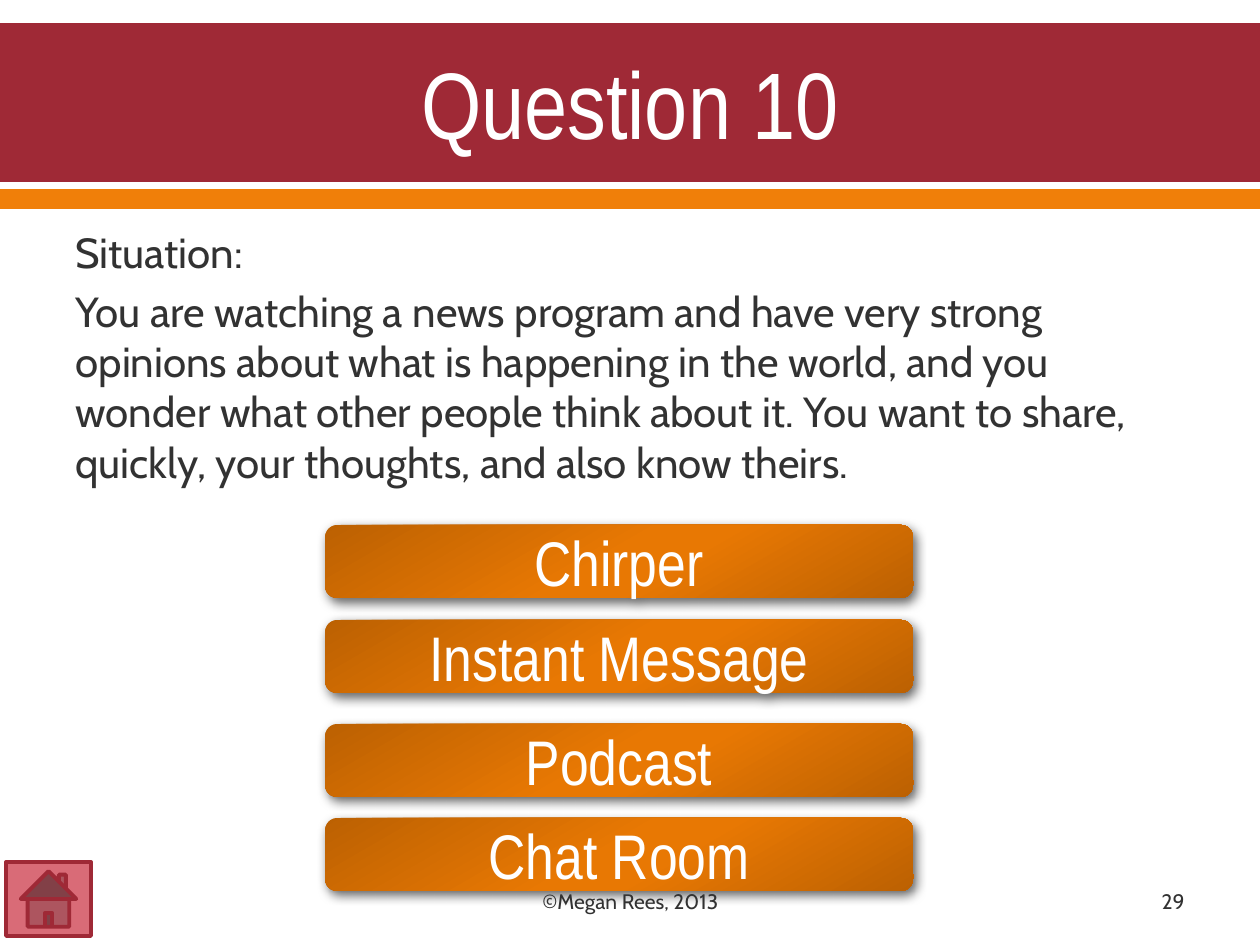
from lxml import etree
from pptx import Presentation
from pptx import util as u
from pptx.dml.color import RGBColor
from pptx.enum import shapes, text
from pptx.oxml import parse_xml
from pptx.oxml.ns import nsdecls, qn

PX = 914400 / 126
WHITE = RGBColor(0xFF, 0xFF, 0xFF)
INK = RGBColor(0x32, 0x32, 0x32)
RED = RGBColor(0x9F, 0x29, 0x36)
ROSE = RGBColor(0xD9, 0x6B, 0x77)
ORANGE = RGBColor(0xF0, 0x7F, 0x09)
BUTTON_STOPS = [(0, RGBColor(0xBC, 0x61, 0x02)), (48, RGBColor(0xE8, 0x78, 0x03)),
                (58, RGBColor(0xE8, 0x78, 0x03)), (100, RGBColor(0xBC, 0x61, 0x02))]
HEADING_FONT, BODY_FONT = "Arial Narrow", "Cabin"
LEFT, CENTER, RIGHT = text.PP_ALIGN.LEFT, text.PP_ALIGN.CENTER, text.PP_ALIGN.RIGHT
MIDDLE, TOP = text.MSO_ANCHOR.MIDDLE, text.MSO_ANCHOR.TOP
SHAPE = shapes.MSO_SHAPE


def px(*lengths):
    return [u.Emu(round(length * PX)) for length in lengths]


def write(frame, *lines, size, font, color, align=CENTER, anchor=MIDDLE):
    frame.word_wrap = True
    frame.vertical_anchor = anchor
    for index, line in enumerate(lines):
        para = frame.add_paragraph() if index else frame.paragraphs[0]
        para.alignment = align
        span = para.add_run()
        span.text = line
        span.font.size = u.Pt(size)
        span.font.name = font
        span.font.color.rgb = color


class QuizPage:
    def __init__(self, deck):
        self.page = deck.slides.add_slide(deck.slide_layouts[1])

    def shape(self, kind, *box, fill=None, line=None, width=2.22):
        shape = self.page.shapes.add_shape(kind, *px(*box))
        shape.shadow.inherit = False
        if fill is not None:
            shape.fill.solid()
            shape.fill.fore_color.rgb = fill
        if line is None:
            shape.line.fill.background()
        else:
            shape.line.color.rgb = line
            shape.line.width = u.Pt(width)
        return shape

    def band(self, top, height, fill):
        band = self.shape(SHAPE.RECTANGLE, 0, top, 1260, height, fill=fill)
        self.page.shapes._spTree.insert(2, band._element)  # behind the placeholders

    def placeholder(self, index, *box):
        holder = self.page.placeholders[index]
        holder.left, holder.top, holder.width, holder.height = px(*box)
        return holder.text_frame

    def title(self, words, *box):
        write(self.placeholder(0, *box), words, size=54, font=HEADING_FONT, color=WHITE)

    def body(self, lines, *box):
        frame = self.placeholder(1, *box)
        write(frame, *lines, size=24, font=BODY_FONT, color=INK, align=LEFT, anchor=TOP)
        for para in frame.paragraphs:
            props = para._p.get_or_add_pPr()
            props.set("marL", "0")
            props.set("indent", "0")
            etree.SubElement(props, qn("a:buNone"))

    def button(self, label, *box):
        button = self.shape(SHAPE.ROUNDED_RECTANGLE, *box)
        stops = "".join(f'<a:gs pos="{at * 1000}"><a:srgbClr val="{color}"/></a:gs>'
                        for at, color in BUTTON_STOPS)
        props = button._element.spPr
        props.find(qn("a:prstGeom")).addnext(parse_xml(
            f'<a:gradFill {nsdecls("a")} rotWithShape="1"><a:gsLst>{stops}</a:gsLst>'
            '<a:lin ang="3600000" scaled="0"/></a:gradFill>'))
        props.find(qn("a:effectLst")).append(parse_xml(
            f'<a:outerShdw {nsdecls("a")} blurRad="{u.Pt(6)}" dist="{u.Pt(3)}" '
            'dir="3600000" rotWithShape="0"><a:srgbClr val="000000">'
            '<a:alpha val="60000"/></a:srgbClr></a:outerShdw>'))
        write(button.text_frame, label, size=36, font=HEADING_FONT, color=WHITE)

    def footer(self, words, *box, align=CENTER):
        label = self.page.shapes.add_textbox(*px(*box))
        write(label.text_frame, words, size=12, font=BODY_FONT, color=INK, align=align)


def main():
    deck = Presentation()
    deck.slide_width, deck.slide_height = px(1260, 945)
    quiz = QuizPage(deck)

    # Header bands and title
    quiz.band(23, 159, RED)
    quiz.band(189, 20, ORANGE)
    quiz.title("Question 10", 63, 25, 1134, 154)

    # Situation
    quiz.body(["Situation:",
               "You are watching a news program and have very strong opinions about "
               "what is happening in the world, and you wonder what other people think "
               "about it. You want to share, quickly, your thoughts, and also know theirs."],
              63, 220, 1134, 624)

    # Answer buttons
    answers = {"Chirper": 525, "Instant Message": 620, "Podcast": 724, "Chat Room": 818}
    for answer, top in answers.items():
        quiz.button(answer, 325, top, 588, 73)

    # Footer and home button
    quiz.footer("©Megan Rees, 2013", 431, 876, 399, 50)
    quiz.footer("29", 903, 876, 294, 50, align=RIGHT)
    quiz.shape(SHAPE.ACTION_BUTTON_HOME, 6, 862, 85, 74, fill=ROSE, line=RED)

    deck.save("out.pptx")


if __name__ == "__main__":
    main()
